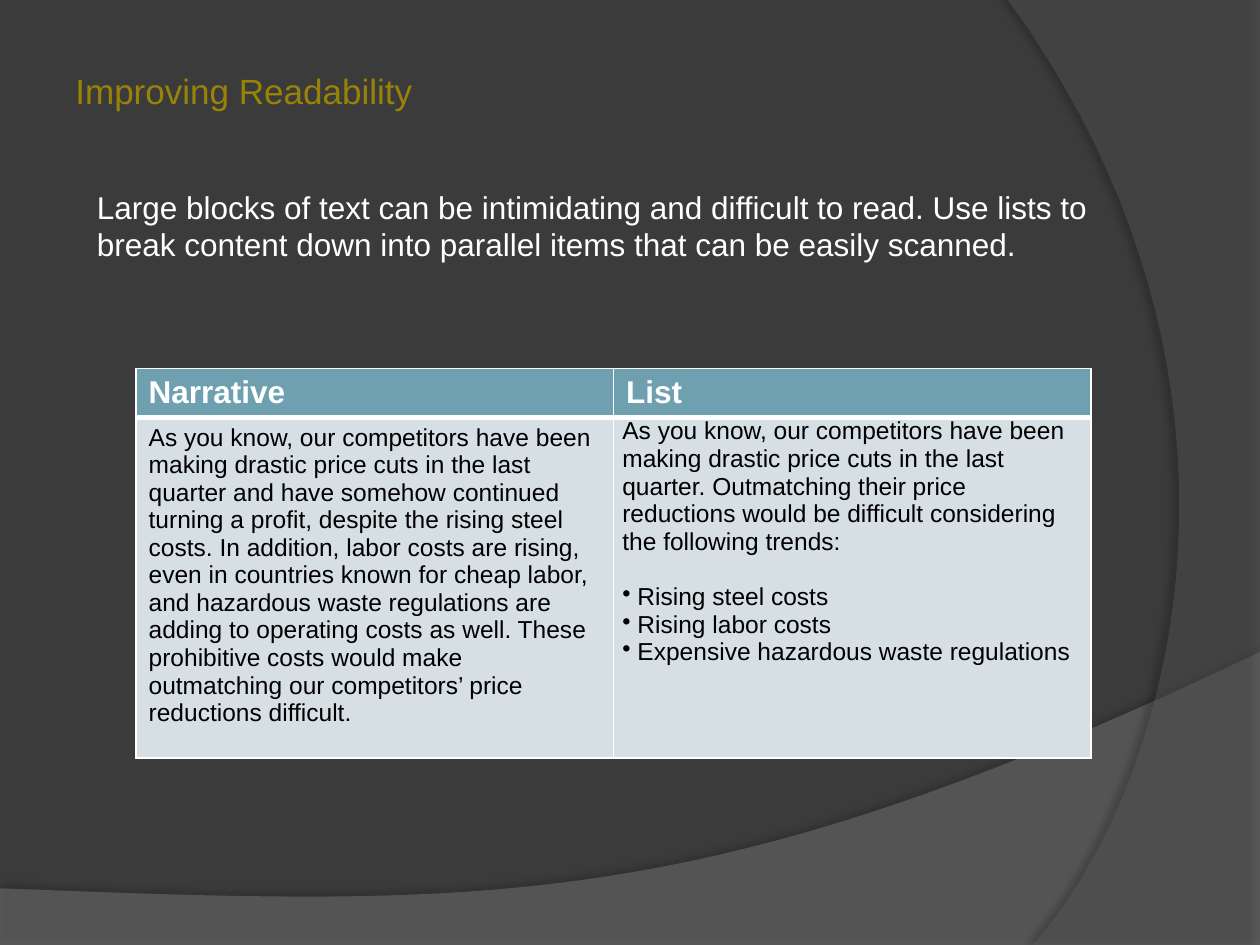
from dataclasses import dataclass

from lxml import etree
from pptx import Presentation
from pptx.dml.color import RGBColor
from pptx.enum.text import MSO_ANCHOR
from pptx.oxml.ns import qn
from pptx.util import Inches, Pt

TOP = MSO_ANCHOR.TOP
WIDTH, HEIGHT = Inches(10), Inches(7.5)
CURVE_STEPS = 40


@dataclass(frozen=True)
class Theme:
    font: str = "Arial"
    background: str = "3B3B3B"
    hill: str = "7F7F7F"
    arc: str = "5E5E5E"
    shadow: str = "000000"
    title: str = "998307"
    light: str = "FFFFFF"
    dark: str = "000000"
    header_fill: str = "6EA0B0"
    body_fill: str = "D5DFE4"
    title_size: int = 20
    lead_size: int = 18
    body_size: int = 14


THEME = Theme()

TITLE = "Improving Readability"
LEAD = ("Large blocks of text can be intimidating and difficult to read. Use lists to "
        "break content down into parallel items that can be easily scanned.")
NARRATIVE = (
    "As you know, our competitors have been making drastic price cuts in the last quarter "
    "and have somehow continued turning a profit, despite the rising steel costs. In addition, "
    "labor costs are rising, even in countries known for cheap labor, and hazardous waste "
    "regulations are adding to operating costs as well. These prohibitive costs would make "
    "outmatching our competitors’ price reductions difficult.")
LIST_INTRO = (
    "As you know, our competitors have been making drastic price cuts in the last quarter. "
    "Outmatching their price reductions would be difficult considering the following trends:")
TRENDS = ["Rising steel costs", "Rising labor costs", "Expensive hazardous waste regulations"]


def across(share):
    return round(WIDTH * share)


def down(share):
    return round(HEIGHT * share)


def curve(start, control_1, control_2, end):
    """Points along a cubic Bezier curve, both ends included."""
    points = []
    for step in range(CURVE_STEPS + 1):
        t = step / CURVE_STEPS
        weights = ((1 - t) ** 3, 3 * t * (1 - t) ** 2, 3 * t ** 2 * (1 - t), t ** 3)
        points.append(tuple(sum(w * p[axis] for w, p in zip(weights, (start, control_1, control_2, end)))
                            for axis in (0, 1)))
    return points


def add_color(parent, color, opacity):
    node = etree.SubElement(parent, qn("a:srgbClr"), val=color)
    etree.SubElement(node, qn("a:alpha"), val=str(opacity * 1000))


def add_swoosh(slide, outline, color, opacity, shadow_opacity, distance, direction):
    """Translucent backdrop outline, given in shares of the slide, with a soft shadow."""
    points = [(across(x), down(y)) for x, y in outline]
    builder = slide.shapes.build_freeform(*points[0])
    builder.add_line_segments(points[1:], close=True)
    swoosh = builder.convert_to_shape()
    swoosh.fill.solid()
    swoosh.fill.fore_color.rgb = RGBColor.from_string(color)
    swoosh.line.fill.background()
    swoosh.shadow.inherit = False
    properties = swoosh._element.spPr
    fill = properties.find(qn("a:solidFill"))
    fill.clear()
    add_color(fill, color, opacity)
    shadow = etree.SubElement(
        properties.find(qn("a:effectLst")), qn("a:outerShdw"), blurRad=str(Pt(4)),
        dist=str(Pt(distance)), dir=str(direction * 60000), algn="ctr", rotWithShape="0")
    add_color(shadow, THEME.shadow, shadow_opacity)


def style(paragraph, size, color, bold=False):
    font = paragraph.font
    font.name, font.size, font.bold = THEME.font, Pt(size), bold
    font.color.rgb = RGBColor.from_string(color)


def add_text(slide, box, text, size, color):
    frame = slide.shapes.add_textbox(*box).text_frame
    frame.word_wrap = True
    frame.vertical_anchor = TOP
    frame.text = text
    style(frame.paragraphs[0], size, color)


def set_borders(cell, **widths):
    properties = cell._tc.get_or_add_tcPr()
    for side in "LRTB":
        line = etree.SubElement(properties, qn(f"a:ln{side}"), w=str(Pt(widths.get(side, 1))))
        fill = etree.SubElement(line, qn("a:solidFill"))
        etree.SubElement(fill, qn("a:srgbClr"), val=THEME.light)


def set_fill(cell, color):
    cell.fill.solid()
    cell.fill.fore_color.rgb = RGBColor.from_string(color)


def add_bullet(frame, text):
    paragraph = frame.add_paragraph()
    paragraph.text = text
    style(paragraph, THEME.body_size, THEME.dark)
    properties = paragraph._p.get_or_add_pPr()
    indent = Inches(0.12)
    properties.set("marL", str(indent))
    properties.set("indent", str(-indent))
    bullet = etree.Element(qn("a:buChar"), char="•")
    properties.find(qn("a:defRPr")).addprevious(bullet)
    return paragraph


def add_comparison(slide):
    table = slide.shapes.add_table(
        2, 2, across(0.108), down(0.39), across(0.758), down(0.412)).table
    table.rows[0].height, table.rows[1].height = down(0.052), down(0.36)
    columns = [("Narrative", NARRATIVE), ("List", LIST_INTRO)]
    for column, (heading, passage) in enumerate(columns):
        header, body = table.cell(0, column), table.cell(1, column)
        header.text, body.text = heading, passage
        style(header.text_frame.paragraphs[0], THEME.lead_size, THEME.light, bold=True)
        style(body.text_frame.paragraphs[0], THEME.body_size, THEME.dark)
        set_borders(header, B=3)
        set_borders(body, T=3)
        set_fill(header, THEME.header_fill)
        set_fill(body, THEME.body_fill)

    list_cell = table.cell(1, 1)
    list_cell.margin_left = list_cell.margin_right = Inches(0.07)
    list_cell.margin_top = list_cell.margin_bottom = 0
    bullets = [add_bullet(list_cell.text_frame, trend) for trend in TRENDS]
    bullets[0].space_before = Pt(16)


def main():
    deck = Presentation()
    deck.slide_width, deck.slide_height = WIDTH, HEIGHT
    slide = deck.slides.add_slide(deck.slide_layouts[6])
    backdrop = slide.background.fill
    backdrop.solid()
    backdrop.fore_color.rgb = RGBColor.from_string(THEME.background)

    hill = [(0, 1), (1, 1)] + curve((1, 0.69), (0.56, 0.97), (0.39, 0.96), (0, 0.94))
    arc = [(1, 0), (1, 1)] + curve((0.82, 1), (0.935, 0.825), (1.018, 0.4), (0.8, 0))
    add_swoosh(slide, hill, THEME.hill, 45, shadow_opacity=35, distance=3.5, direction=270)
    add_swoosh(slide, arc, THEME.arc, 40, shadow_opacity=45, distance=4, direction=180)

    add_comparison(slide)
    add_text(slide, (across(0.067), down(0.192), across(0.842), down(0.135)),
             LEAD, THEME.lead_size, THEME.light)
    add_text(slide, (across(0.05), down(0.067), across(0.4), down(0.058)),
             TITLE, THEME.title_size, THEME.title)
    deck.save("out.pptx")


if __name__ == "__main__":
    main()
